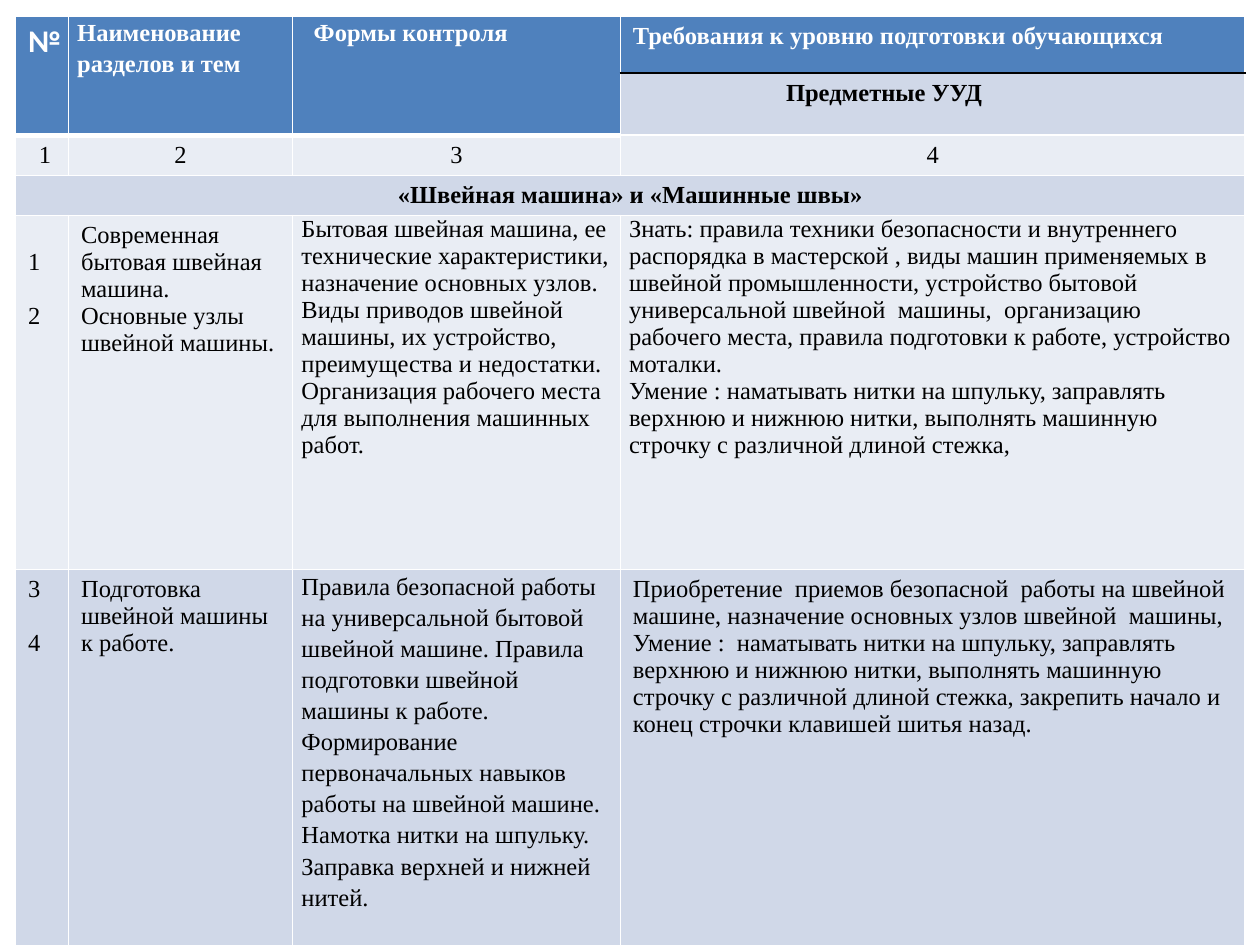
import pptx
import pptx.util
import pptx.dml.color
import pptx.enum.text
import pptx.oxml
import pptx.oxml.ns

Pt = pptx.util.Pt
RGB = pptx.dml.color.RGBColor.from_string
CENTER = pptx.enum.text.PP_ALIGN.CENTER

COLORS = {"header": "4F81BD", "dark": "D0D8E8", "light": "E9EDF4",
          "white": "FFFFFF", "black": "000000"}
COLUMN_WIDTHS = [30.25, 128.15, 187.2, 357.1]
ROW_HEIGHTS = [32.6, 35.4, 22.9, 22.9, 202.3, 214.9]
ROW_FILLS = ["header", "dark", "light", "dark", "light", "dark"]
LINE_GAP = 15.4

CONTENT = {
    (0, 0): ["№"],
    (0, 1): ["Наименование разделов и тем"],
    (0, 2): ["Формы контроля"],
    (0, 3): ["Требования к уровню подготовки обучающихся"],
    (1, 3): ["Предметные УУД"],
    (2, 0): ["1"],
    (2, 1): ["2"],
    (2, 2): ["3"],
    (2, 3): ["4"],
    (3, 0): ["«Швейная машина» и «Машинные швы»"],
    (4, 0): ["1", "2"],
    (4, 1): ["Современная бытовая швейная  машина. Основные узлы швейной машины."],
    (4, 2): ["Бытовая швейная машина, ее технические характеристики, назначение "
             "основных узлов. Виды приводов швейной машины, их устройство, "
             "преимущества и недостатки. Организация рабочего места для "
             "выполнения машинных работ."],
    (4, 3): ["Знать: правила техники безопасности и внутреннего распорядка в "
             "мастерской , виды машин применяемых в швейной промышленности, "
             "устройство бытовой универсальной швейной  машины,  организацию "
             "рабочего места, правила подготовки к работе, устройство моталки.",
             "Умение : наматывать нитки на шпульку, заправлять верхнюю и нижнюю "
             "нитки, выполнять машинную строчку с различной длиной стежка,"],
    (5, 0): ["3", "4"],
    (5, 1): ["Подготовка швейной машины к работе."],
    (5, 2): ["Правила безопасной работы на универсальной бытовой швейной машине. "
             "Правила подготовки швейной машины к работе. Формирование "
             "первоначальных навыков работы на швейной машине. Намотка нитки на "
             "шпульку. Заправка верхней и нижней нитей."],
    (5, 3): ["Приобретение  приемов безопасной  работы на швейной машине, "
             "назначение основных узлов швейной  машины,",
             "Умение :  наматывать нитки на шпульку, заправлять верхнюю и нижнюю "
             "нитки, выполнять машинную строчку с различной длиной стежка, "
             "закрепить начало и конец строчки клавишей шитья назад."],
}
TIGHT = {(0, 1), (0, 2), (4, 2), (4, 3), (5, 2)}
LOOSE_LINES = {(0, 1), (0, 2), (5, 2)}
LEFT_MARGINS = {(0, 2): 12, (1, 3): 94.7, (2, 0): 10.7}


def set_borders(cell, edges):
    properties = cell._tc.get_or_add_tcPr()
    for position, (side, color, width) in enumerate(edges):
        properties.insert(position, pptx.oxml.parse_xml(
            f'<a:ln{side} {pptx.oxml.ns.nsdecls("a")} w="{Pt(width)}">'
            f'<a:solidFill><a:srgbClr val="{COLORS[color]}"/></a:solidFill>'
            f'</a:ln{side}>'))


presentation = pptx.Presentation()
presentation.slide_width = Pt(720)
presentation.slide_height = Pt(540)
slide = presentation.slides.add_slide(presentation.slide_layouts[6])

plan = slide.shapes.add_table(
    len(ROW_HEIGHTS), len(COLUMN_WIDTHS), Pt(8.9), Pt(9.1),
    Pt(sum(COLUMN_WIDTHS)), Pt(sum(ROW_HEIGHTS))).table
for column, width in zip(plan.columns, COLUMN_WIDTHS):
    column.width = Pt(width)
for row, height in zip(plan.rows, ROW_HEIGHTS):
    row.height = Pt(height)

for column in range(3):
    plan.cell(0, column).merge(plan.cell(1, column))
plan.cell(3, 0).merge(plan.cell(3, 3))

for row, band in enumerate(ROW_FILLS):
    for column in range(len(COLUMN_WIDTHS)):
        place = (row, column)
        cell = plan.cell(row, column)
        heading = row == 0 or (row == 1 and column < 3)
        cell.fill.solid()
        cell.fill.fore_color.rgb = RGB(COLORS["header" if heading else band])

        top, bottom, bottom_width = "white", "white", 1
        if place == (0, 3):
            bottom = "black"
        elif place == (1, 3):
            top = "black"
        elif heading:
            bottom_width = 3
        set_borders(cell, [("L", "white", 1), ("R", "white", 1),
                           ("T", top, 1), ("B", bottom, bottom_width)])

        if place not in CONTENT:
            continue
        if place in TIGHT:
            cell.margin_left = cell.margin_right = Pt(5)
            cell.margin_top = cell.margin_bottom = Pt(0)
        if place in LEFT_MARGINS:
            cell.margin_left = Pt(LEFT_MARGINS[place])
        if place == (4, 0):
            cell.margin_top = Pt(3.6 + LINE_GAP)

        cell.text_frame.text = "\n".join(CONTENT[place])
        for index, paragraph in enumerate(cell.text_frame.paragraphs):
            if row in (2, 3):
                paragraph.alignment = CENTER
            if place in LOOSE_LINES:
                paragraph.line_spacing = 1.15
            if column == 0 and index:
                paragraph.space_before = Pt(LINE_GAP)
            for run in paragraph.runs:
                run.font.name = "Calibri" if place == (0, 0) else "Times New Roman"
                run.font.size = Pt(18 if place == (0, 0) else 14)
                run.font.bold = row in (0, 1, 3)
                run.font.color.rgb = RGB(COLORS["white" if heading else "black"])

presentation.save("out.pptx")
